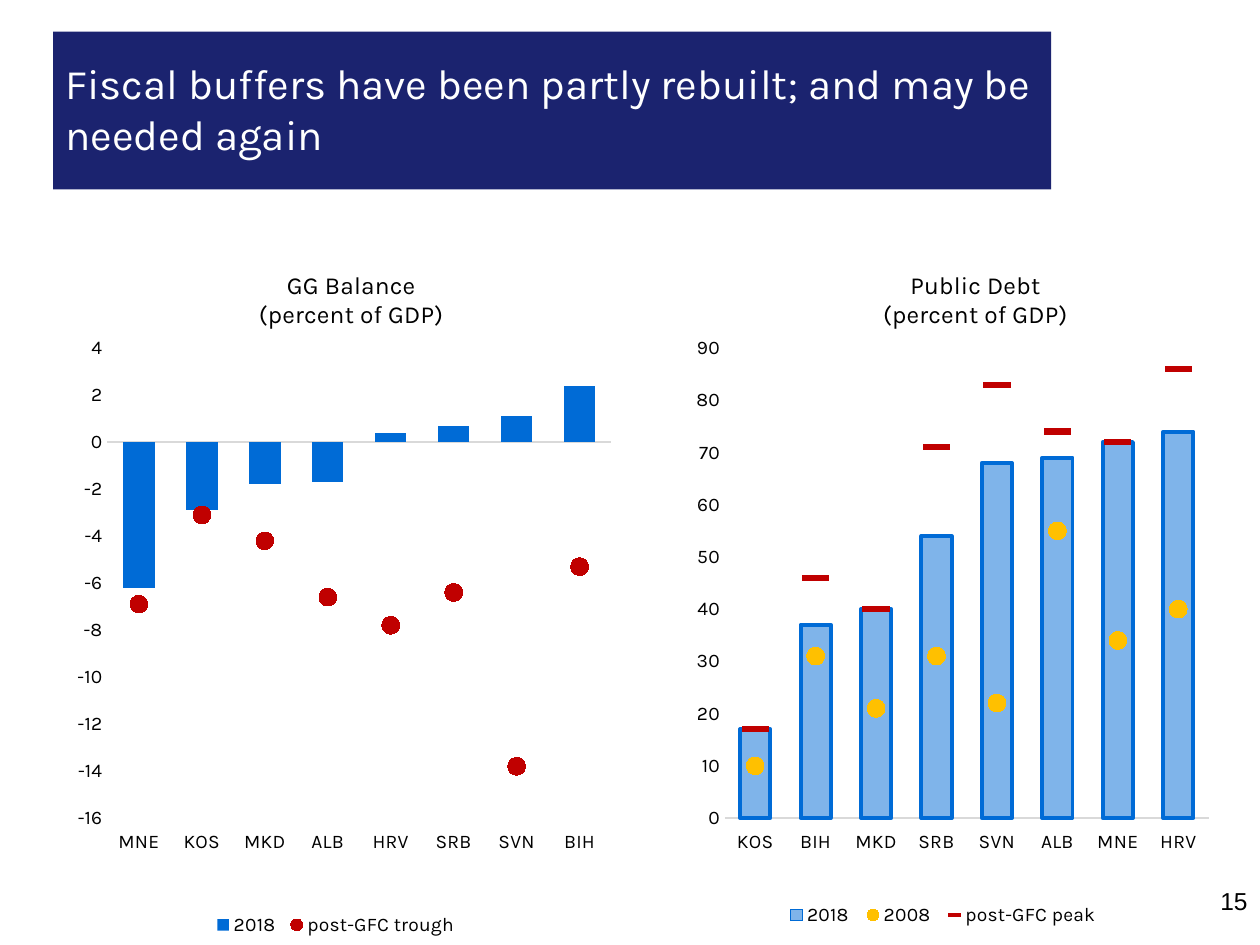
from pptx import Presentation
from pptx.chart.data import CategoryChartData
from pptx.dml.color import RGBColor
from pptx.enum.chart import (XL_CHART_TYPE, XL_LEGEND_POSITION, XL_MARKER_STYLE,
                             XL_TICK_LABEL_POSITION, XL_TICK_MARK)
from pptx.enum.shapes import MSO_SHAPE
from pptx.enum.text import PP_ALIGN
from pptx.oxml import parse_xml
from pptx.oxml.ns import nsdecls, qn
from pptx.util import Cm, Pt

COLUMN = XL_CHART_TYPE.COLUMN_CLUSTERED
BOTTOM = XL_LEGEND_POSITION.BOTTOM
CIRCLE, DASH = XL_MARKER_STYLE.CIRCLE, XL_MARKER_STYLE.DASH
LOW, NONE = XL_TICK_LABEL_POSITION.LOW, XL_TICK_MARK.NONE
RECT = MSO_SHAPE.RECTANGLE
LEFT, RIGHT = PP_ALIGN.LEFT, PP_ALIGN.RIGHT
FONT = "Karla"
NAVY, BLUE, RED, GOLD = "1B236F", "006BD6", "C00000", "FFC000"
BLACK, WHITE, GREY = "000000", "FFFFFF", "D9D9D9"


def paint(fmt, color):
    fmt.solid()
    fmt.fore_color.rgb = RGBColor.from_string(color)


def style(font, size, color=BLACK, name=FONT):
    font.size, font.name, font.bold = Pt(size), name, False
    paint(font.fill, color)


def add_text(slide, text, box, size, color=BLACK, name=FONT, align=LEFT):
    frame = slide.shapes.add_textbox(*map(Cm, box)).text_frame
    frame.word_wrap = True
    para = frame.paragraphs[0]
    para.alignment = align
    run = para.add_run()
    run.text = text
    style(run.font, size, color, name)


def add_band(slide, box, color):
    band = slide.shapes.add_shape(RECT, *map(Cm, box))
    band.shadow.inherit = False
    paint(band.fill, color)
    band.line.fill.background()


def place(node, x, y, w=None, h=None, inner=False):
    for old in node.findall(qn("c:layout")):
        node.remove(old)
    sizes = [(k, v) for k, v in zip("xywh", (x, y, w, h)) if v is not None]
    target = '<c:layoutTarget val="inner"/>' if inner else ""
    modes = "".join(f'<c:{k}Mode val="edge"/>' for k in "xy")
    values = "".join(f'<c:{k} val="{v}"/>' for k, v in sizes)
    layout = parse_xml(f'<c:layout {nsdecls("c")}><c:manualLayout>{target}'
                       f'{modes}{values}</c:manualLayout></c:layout>')
    if inner:
        node.insert(0, layout)
    else:
        before = "c:tx" if node.tag == qn("c:title") else "c:legendPos"
        node.find(qn(before)).addnext(layout)


def split_lines(chart):
    bars = chart.plots[0]
    bar = chart.element.find(".//" + qn("c:barChart"))
    line = parse_xml(f'<c:lineChart {nsdecls("c")}><c:grouping val="standard"/>'
                     '<c:varyColors val="0"/><c:marker val="1"/></c:lineChart>')
    mark = line.find(qn("c:marker"))
    for ser in bar.findall(qn("c:ser"))[1:]:
        for flag in ser.findall(qn("c:invertIfNegative")):
            ser.remove(flag)
        mark.addprevious(ser)
    for axis in bar.findall(qn("c:axId")):
        line.append(parse_xml(f'<c:axId {nsdecls("c")} val="{axis.get("val")}"/>'))
    bar.addnext(line)
    return bars, chart.plots[1]


def set_axes(chart, low, high, step):
    cat, val = chart.category_axis, chart.value_axis
    for axis in (cat, val):
        axis.major_tick_mark = axis.minor_tick_mark = NONE
        axis.has_major_gridlines = False
        style(axis.tick_labels.font, 11)
    cat.tick_label_position = LOW
    paint(cat.format.line.fill, GREY)
    cat.format.line.width = Pt(0.75)
    val.minimum_scale, val.maximum_scale, val.major_unit = low, high, step
    val.tick_labels.number_format = "0"
    val.tick_labels.number_format_is_linked = False
    val.format.line.fill.background()


def set_title(chart, lines, spot):
    frame = chart.chart_title.text_frame
    for i, text in enumerate(lines):
        para = frame.add_paragraph() if i else frame.paragraphs[0]
        run = para.add_run()
        run.text = text
        style(run.font, 14)
    chart.chart_title.include_in_layout = False
    place(chart.element.find(".//" + qn("c:title")), *spot)


def set_legend(chart, spot):
    chart.has_legend = True
    chart.legend.position = BOTTOM
    chart.legend.include_in_layout = False
    style(chart.legend.font, 11)
    place(chart.element.find(".//" + qn("c:legend")), *spot)


def add_combo(slide, left, title, cats, series, marks, scale, plot, spot, key):
    data = CategoryChartData(number_format="0.0")
    data.categories = cats.split()
    for name, vals in series:
        data.add_series(name, vals)
    chart = slide.shapes.add_chart(COLUMN, Cm(left), Cm(4.01), Cm(13.54),
                                   Cm(15.04), data).chart
    style(chart.font, 11)
    chart.element.find(qn("c:chart")).addnext(parse_xml(
        f'<c:spPr {nsdecls("c", "a")}><a:noFill/><a:ln><a:noFill/></a:ln></c:spPr>'))
    set_axes(chart, *scale)
    set_title(chart, title, spot)
    set_legend(chart, key)
    place(chart.element.find(".//" + qn("c:plotArea")), *plot, inner=True)
    bars, lines = split_lines(chart)
    bars.gap_width, bars.vary_by_categories = 100, False
    paint(bars.series[0].format.fill, BLUE)
    bars.series[0].invert_if_negative = False
    for ser, (shape, size, color) in zip(lines.series, marks):
        ser.smooth = False
        ser.format.line.fill.background()
        ser.marker.style, ser.marker.size = shape, size
        paint(ser.marker.format.fill, color)
        ser.marker.format.line.fill.background()
    return bars


def outline(bars):
    fmt = bars.series[0].format
    paint(fmt.line.fill, BLUE)
    fmt.line.width = Pt(2.25)
    color = bars.series[0]._element.find(qn("c:spPr")).find(
        qn("a:solidFill")).find(qn("a:srgbClr"))
    color.append(parse_xml(f'<a:alpha {nsdecls("a")} val="50000"/>'))


def main():
    deck = Presentation()
    deck.slide_width, deck.slide_height = Cm(25.4), Cm(19.05)
    slide = deck.slides.add_slide(deck.slide_layouts[6])
    add_band(slide, (1.07, 0.64, 20.12, 3.18), NAVY)
    add_text(slide, "15", (19.48, 17.73, 5.92, 1.32), 14, name="Arial", align=RIGHT)
    add_text(slide, "Fiscal buffers have been partly rebuilt; and may be needed again",
             (1.07, 1.04, 20.12, 2.31), 24, WHITE)
    balance = add_combo(
        slide, 0, ("GG Balance", "(percent of GDP)"),
        "MNE KOS MKD ALB HRV SRB SVN BIH",
        [("2018", (-6.2, -2.9, -1.8, -1.7, 0.4, 0.7, 1.1, 2.4)),
         ("post-GFC trough", (-6.9, -3.1, -4.2, -6.6, -7.8, -6.4, -13.8, -5.3))],
        [(CIRCLE, 10, RED)], (-16, 4, 2),
        (0.16, 0.2, 0.75, 0.63), (0.38, 0.09), (0.31, 0.96, 0.38, 0.04))
    balance.overlap = -27
    debt = add_combo(
        slide, 11.23, ("Public Debt", "(percent of GDP)"),
        "KOS BIH MKD SRB SVN ALB MNE HRV",
        [("2018", (17, 37, 40, 54, 68, 69, 72, 74)),
         ("2008", (10, 31, 21, 31, 22, 55, 34, 40)),
         ("post-GFC peak", (17, 46, 40, 71, 83, 74, 72, 86))],
        [(CIRCLE, 10, GOLD), (DASH, 15, RED)], (0, 90, 10),
        (0.25, 0.2, 0.72, 0.63), (0.48, 0.09), (0.33, 0.94, 0.49, 0.04))
    outline(debt)
    deck.save("out.pptx")


if __name__ == "__main__":
    main()
